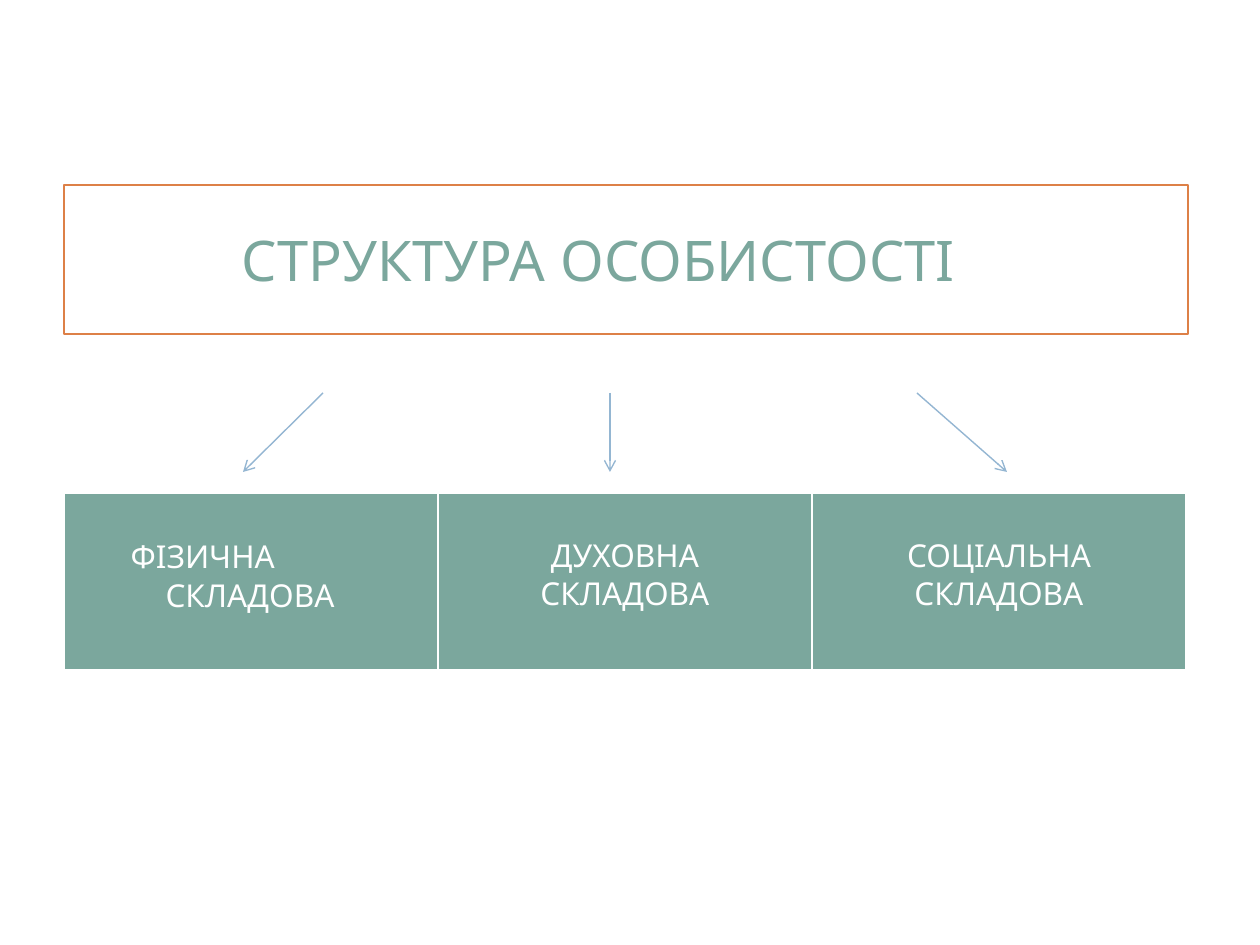
"""Builds a slide on the structure of personality: a title, three arrows and three components."""
from lxml import etree
from pptx import Presentation, util as u
from pptx.dml.color import RGBColor
from pptx.enum import shapes, text
from pptx.oxml.ns import qn

TITLE = "СТРУКТУРА ОСОБИСТОСТІ"
COMPONENTS = [
    {"lines": ["ФІЗИЧНА СКЛАДОВА"], "font": "Quicksand", "hanging": (89, -35)},
    {"lines": ["ДУХОВНА", "СКЛАДОВА"], "font": "Cabin"},
    {"lines": ["СОЦІАЛЬНА", "СКЛАДОВА"], "font": "Cabin"},
]
ARROWS = [(917, 1007), (323, 243), (610, 610)]
ARROW_TOP, ARROW_BOTTOM = 393, 472
TITLE_BOX = (64, 185, 1124, 149)
TABLE_BOX = (64, 493, 1122, 178)
BORDERS = {"lnL": 1, "lnR": 1, "lnT": 1, "lnB": 3}
COLORS = {"green": "7BA79D", "orange": "DD8047", "blue": "94B6D2", "white": "FFFFFF"}


def px(length):
    return u.Emu(round(length * 914400 / 126))


def rgb(name):
    return RGBColor.from_string(COLORS[name])


def assign(target, values):
    for key, value in values.items():
        setattr(target, key, value)


def write(paragraph, words, font, size, color):
    run = paragraph.add_run()
    run.text = words
    assign(run.font, {"name": font, "size": u.Pt(size), "bold": False})
    run.font.color.rgb = rgb(color)


def paint(part, color):
    part.fill.solid()
    part.fill.fore_color.rgb = rgb(color)


def add_title(slide):
    title = slide.shapes.title
    assign(title, dict(zip(("left", "top", "width", "height"), map(px, TITLE_BOX))))
    paint(title, "white")
    title.line.color.rgb = rgb("orange")
    title.line.width = u.Pt(1.5)
    frame = title.text_frame
    assign(frame, {"margin_left": px(178), "word_wrap": True,
                   "auto_size": text.MSO_AUTO_SIZE.NONE,
                   "vertical_anchor": text.MSO_ANCHOR.MIDDLE})
    frame.paragraphs[0].alignment = text.PP_ALIGN.LEFT
    write(frame.paragraphs[0], TITLE, "Quicksand", 32, "green")


def add_borders(cell):
    properties = cell._tc.get_or_add_tcPr()
    for position, (side, points) in enumerate(BORDERS.items()):
        border = etree.Element(qn(f"a:{side}"), w=str(u.Pt(points)))
        fill = etree.SubElement(border, qn("a:solidFill"))
        etree.SubElement(fill, qn("a:srgbClr"), val=COLORS["white"])
        properties.insert(position, border)


def fill_cell(cell, component):
    paint(cell, "green")
    add_borders(cell)
    assign(cell, {"margin_top": px(44), "vertical_anchor": text.MSO_ANCHOR.TOP})
    frame = cell.text_frame
    for number, line in enumerate(component["lines"]):
        paragraph = frame.add_paragraph() if number else frame.paragraphs[0]
        paragraph.alignment = text.PP_ALIGN.CENTER
        if "hanging" in component:
            paragraph.alignment = text.PP_ALIGN.LEFT
            margin, indent = component["hanging"]
            properties = paragraph._p.get_or_add_pPr()
            properties.set("marL", str(px(margin)))
            properties.set("indent", str(px(indent)))
        write(paragraph, line, component["font"], 18, "white")


def add_components(slide):
    table = slide.shapes.add_table(1, len(COMPONENTS), *map(px, TABLE_BOX)).table
    for column, component in enumerate(COMPONENTS):
        fill_cell(table.cell(0, column), component)


def add_arrow(slide, start, end):
    arrow = slide.shapes.add_connector(
        shapes.MSO_CONNECTOR.STRAIGHT, px(start), px(ARROW_TOP), px(end), px(ARROW_BOTTOM))
    arrow.line.color.rgb = rgb("blue")
    arrow.line.width = u.Pt(0.79)
    etree.SubElement(arrow.line._get_or_add_ln(), qn("a:tailEnd"), type="arrow")
    etree.SubElement(arrow._element.spPr, qn("a:effectLst"))


def main():
    deck = Presentation()
    assign(deck, {"slide_width": px(1260), "slide_height": px(945)})
    slide = deck.slides.add_slide(deck.slide_layouts[5])
    add_title(slide)
    add_components(slide)
    for start, end in ARROWS:
        add_arrow(slide, start, end)
    deck.save("out.pptx")


if __name__ == "__main__":
    main()
